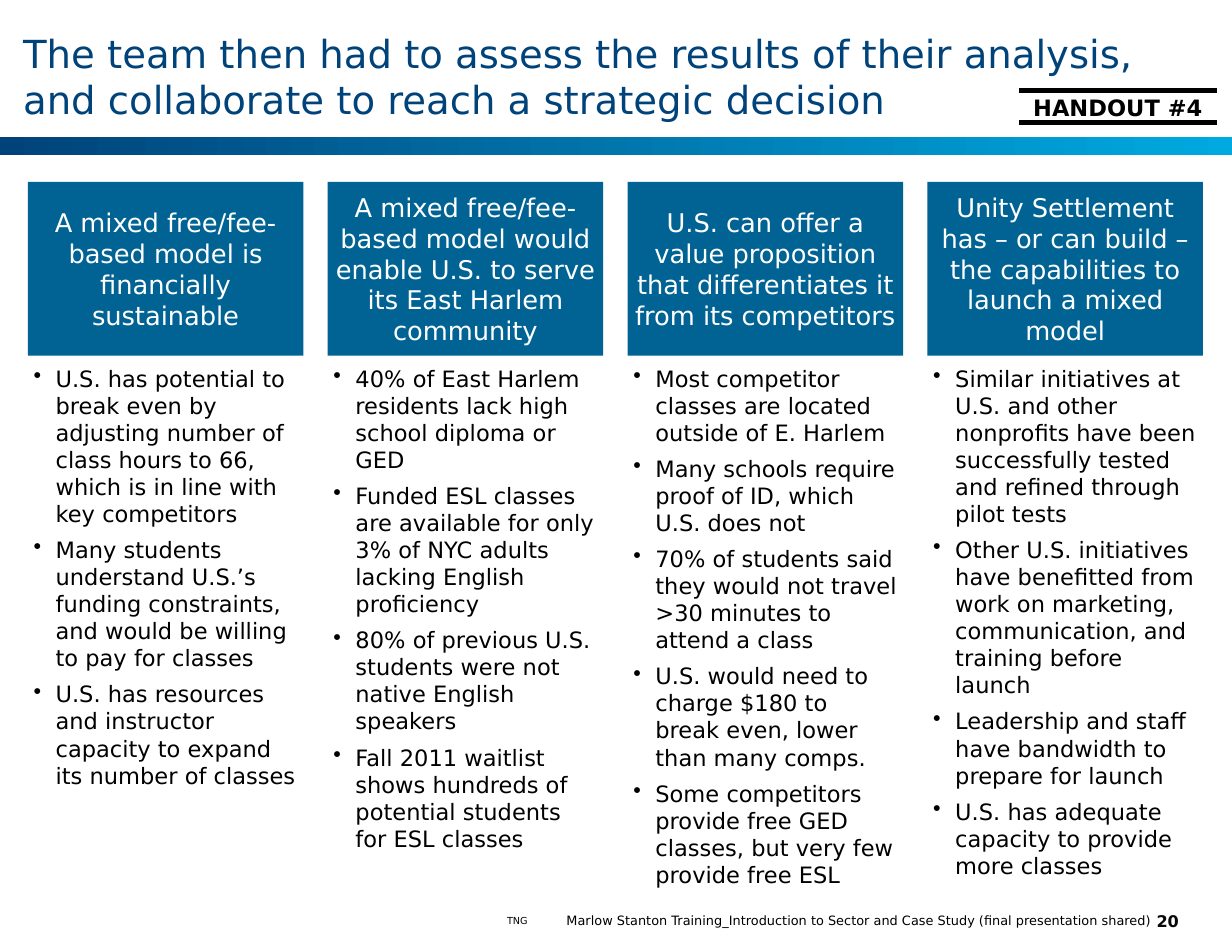
from lxml import etree
from pptx import Presentation
from pptx.dml.color import RGBColor
from pptx.enum.dml import MSO_THEME_COLOR
from pptx.enum.shapes import MSO_CONNECTOR, MSO_SHAPE
from pptx.enum.text import MSO_ANCHOR, MSO_AUTO_SIZE, PP_ALIGN
from pptx.oxml.ns import qn
from pptx.util import Inches, Pt

LEFT, CENTER, RIGHT = PP_ALIGN.LEFT, PP_ALIGN.CENTER, PP_ALIGN.RIGHT
TOP, MIDDLE = MSO_ANCHOR.TOP, MSO_ANCHOR.MIDDLE
NAVY = RGBColor(0x00, 0x43, 0x7A)
SKY = RGBColor(0x00, 0xA9, 0xE0)
BLUE = RGBColor(0x00, 0x63, 0x93)
WHITE = RGBColor(0xFF, 0xFF, 0xFF)
BLACK = RGBColor(0x00, 0x00, 0x00)
INK = RGBColor(0x08, 0x08, 0x08)
FONT = "DejaVu Sans"

COLUMNS = [
    ("A mixed free/fee-based model is financially sustainable", [
        "U.S. has potential to break even by adjusting number of class hours "
        "to 66, which is in line with key competitors",
        "Many students understand U.S.’s funding constraints, and would be "
        "willing to pay for classes",
        "U.S. has resources and instructor capacity to expand its number of "
        "classes"]),
    ("A mixed free/fee-based model would enable U.S. to serve its East "
     "Harlem community", [
        "40% of East Harlem residents lack high school diploma or GED",
        "Funded ESL classes are available for only 3% of NYC adults lacking "
        "English proficiency",
        "80% of previous U.S. students were not native English speakers",
        "Fall 2011 waitlist shows hundreds of potential students for ESL "
        "classes"]),
    ("U.S. can offer a value proposition that differentiates it from its "
     "competitors", [
        "Most competitor classes are located outside of E. Harlem",
        "Many schools require proof of ID, which U.S. does not",
        "70% of students said they would not travel >30 minutes to attend a "
        "class",
        "U.S. would need to charge $180 to break even, lower than many comps.",
        "Some competitors provide free GED classes, but very few provide "
        "free ESL"]),
    ("Unity Settlement has – or can build – the capabilities to launch a "
     "mixed model", [
        "Similar initiatives at U.S. and other nonprofits have been "
        "successfully tested and refined through pilot tests",
        "Other U.S. initiatives have benefitted from work on marketing, "
        "communication, and training before launch",
        "Leadership and staff have bandwidth to prepare for launch",
        "U.S. has adequate capacity to provide more classes"]),
]


def write(shape, text, size, color, align=LEFT, anchor=MIDDLE, pad=0,
          bold=False, wrap=True, bullet=False):
    """Fill a shape with text, one paragraph per line."""
    frame = shape.text_frame
    frame.text = text
    frame.word_wrap = wrap
    frame.auto_size = MSO_AUTO_SIZE.NONE
    frame.vertical_anchor = anchor
    frame.margin_left = frame.margin_right = Inches(pad)
    frame.margin_top = frame.margin_bottom = Inches(pad)
    for i, para in enumerate(frame.paragraphs):
        para.alignment = align
        if bullet:
            props = para._p.get_or_add_pPr()
            props.set("marL", str(Inches(0.19)))
            props.set("indent", str(-Inches(0.19)))
            etree.SubElement(props, qn("a:buChar")).set("char", "•")
            para.space_before = Pt(5.6 if i else 0)
        for run in para.runs:
            font = run.font
            font.name, font.size, font.bold = FONT, Pt(size), bold
            font.color.rgb = color


def place(*box):
    return [Inches(n) for n in box]


deck = Presentation()
deck.slide_width, deck.slide_height = Inches(10.64), Inches(8.14)
slide = deck.slides.add_slide(deck.slide_layouts[5])
shapes = slide.shapes

# Title and gradient band
title = shapes.title
title.left, title.top, title.width, title.height = place(0.2, 0.16, 10.28, 0.99)
write(title, "The team then had to assess the results of their analysis, "
      "and collaborate to reach a strategic decision", 24, NAVY)
title.text_frame.margin_right = Inches(0.08)

band = shapes.add_shape(MSO_SHAPE.RECTANGLE, *place(0, 1.18, 10.64, 0.16))
band.shadow.inherit = False
band.line.fill.background()
band.fill.gradient()
band.fill.gradient_angle = 0
for stop, color, pos in zip(band.fill.gradient_stops, (NAVY, SKY), (0, 1)):
    stop.color.theme_color = MSO_THEME_COLOR.ACCENT_1
    stop.color.rgb = color
    stop.position = pos

# Four columns: heading box above a bulleted list
for i, (head, points) in enumerate(COLUMNS):
    x = 0.24 + 2.59 * i
    box = shapes.add_shape(MSO_SHAPE.RECTANGLE, *place(x, 1.57, 2.38, 1.5))
    box.shadow.inherit = False
    box.fill.solid()
    box.fill.fore_color.rgb = BLUE
    box.line.fill.background()
    write(box, head, 16, WHITE, CENTER, pad=0.05)
    body = shapes.add_textbox(*place(x, 3.1, 2.38, 4.72))
    write(body, "\n".join(points), 14, BLACK, anchor=TOP, pad=0.05, bullet=True)

# Handout tag between two rules
tag = shapes.add_textbox(*place(8.76, 0.76, 1.79, 0.33))
write(tag, "HANDOUT #4", 14, BLACK, CENTER, bold=True)
for y in (0.78, 1.06):
    rule = shapes.add_connector(MSO_CONNECTOR.STRAIGHT, *place(8.8, y, 10.51, y))
    rule.line.color.rgb = BLACK
    rule.line.width = Pt(3)
    etree.SubElement(rule._element.spPr, qn("a:effectLst"))

# Footer
mark = shapes.add_textbox(*place(4.38, 7.9, 0.23, 0.1))
write(mark, "TNG", 6, BLACK, wrap=False)
note = shapes.add_textbox(*place(4.72, 7.88, 5.23, 0.13))
write(note, "Marlow Stanton Training_Introduction to Sector and Case Study "
      "(final presentation shared)", 8, BLACK, RIGHT)
page = shapes.add_textbox(*place(9.91, 7.9, 0.35, 0.1))
write(page, "20", 10, INK, CENTER, bold=True, wrap=False)

deck.save("out.pptx")
